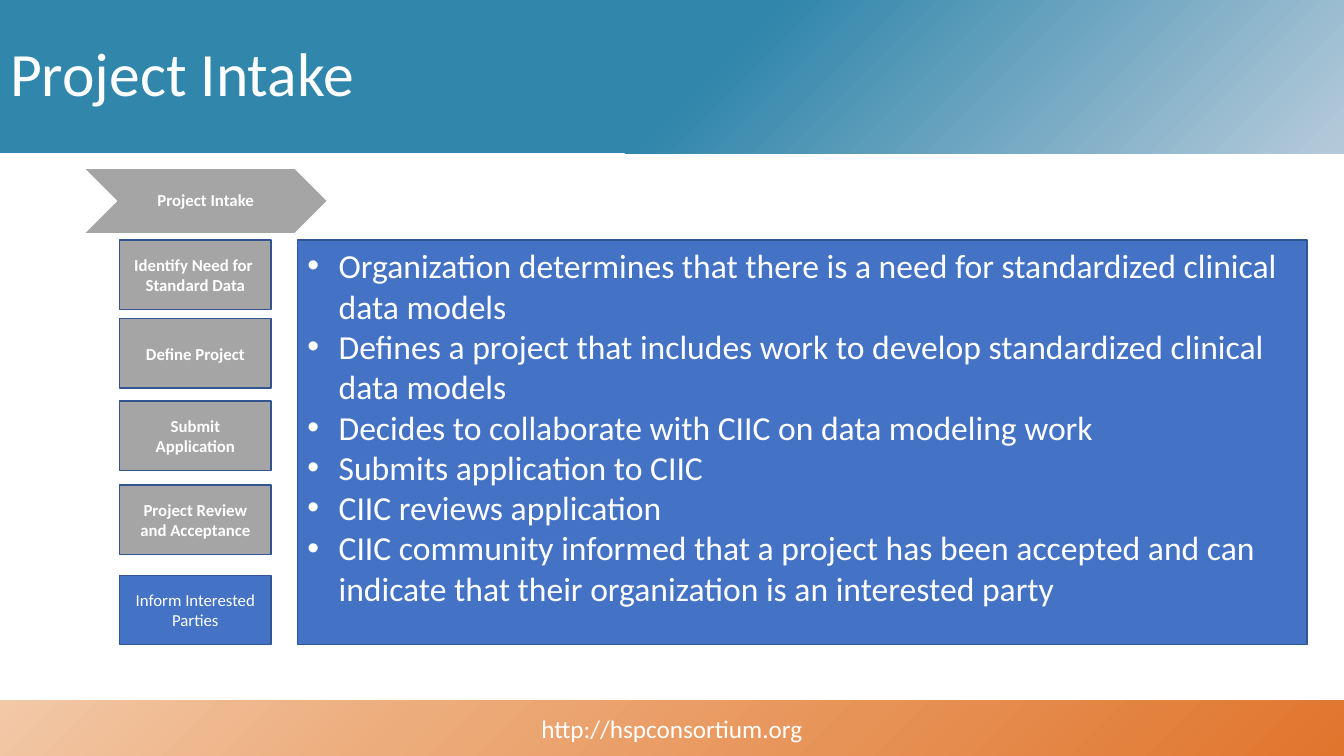
from dataclasses import dataclass

from lxml import etree
from pptx import Presentation
from pptx import util as u
from pptx.dml.color import RGBColor
from pptx.enum import shapes, text
from pptx.oxml import ns


@dataclass(frozen=True)
class Theme:
    font: str = "Calibri"
    white: str = "FFFFFF"
    blue: str = "4472C4"
    grey: str = "A5A5A5"
    edge: str = "325491"
    header: tuple = ((1, "B3C9D9"), (48, "3086AB"), (97, "3086AB"))
    footer: tuple = ((0, "E0752D"), (69, "EDAC7B"), (100, "F2C8A7"))
    title_size: int = 44
    list_size: int = 24
    footer_size: int = 18
    step_size: int = 12


def apply(target, values):
    for key, value in values.items():
        setattr(target, key, value)


class SlideBuilder:
    def __init__(self, deck, theme):
        self.theme = theme
        self.slide = deck.slides.add_slide(deck.slide_layouts[1])

    def place(self, item, box):
        apply(item, dict(zip(("left", "top", "width", "height"), map(u.Cm, box))))

    def paint(self, item, fill, edge):
        item.fill.solid()
        item.fill.fore_color.rgb = RGBColor.from_string(fill)
        item.line.color.rgb = RGBColor.from_string(edge)
        item.line.width = u.Pt(1)

    def set_text(self, item, lines, size, bold=False, align=text.PP_ALIGN.CENTER,
                 anchor=text.MSO_ANCHOR.MIDDLE, spacing=1.0, bulleted=False):
        frame = item.text_frame
        frame.text = "\n".join(lines)
        apply(frame, {"word_wrap": True, "auto_size": text.MSO_AUTO_SIZE.NONE,
                      "vertical_anchor": anchor})
        for paragraph in frame.paragraphs:
            if bulleted:
                self.bullet(paragraph)
            apply(paragraph, {"alignment": align, "line_spacing": spacing,
                              "space_before": u.Pt(0)})
            for run in paragraph.runs:
                apply(run.font, {"name": self.theme.font, "size": u.Pt(size), "bold": bold})
                run.font.color.rgb = RGBColor.from_string(self.theme.white)

    def bullet(self, paragraph):
        properties = paragraph._p.get_or_add_pPr()
        indent = u.Cm(0.79)
        properties.set("marL", str(indent))
        properties.set("indent", str(-indent))
        etree.SubElement(properties, ns.qn("a:buFont")).set("typeface", "Arial")
        etree.SubElement(properties, ns.qn("a:buChar")).set("char", "•")

    def shape(self, kind, box):
        item = self.slide.shapes.add_shape(kind, *map(u.Cm, box))
        item.shadow.inherit = False
        return item

    def band(self, box, stops):
        item = self.shape(shapes.MSO_SHAPE.RECTANGLE, box)
        item.line.fill.background()
        item.fill.gradient()
        gradient = item._element.spPr.find(ns.qn("a:gradFill"))
        for child in list(gradient):
            gradient.remove(child)
        stop_list = etree.SubElement(gradient, ns.qn("a:gsLst"))
        for percent, color in stops:
            stop = etree.SubElement(stop_list, ns.qn("a:gs"), pos=str(percent * 1000))
            etree.SubElement(stop, ns.qn("a:srgbClr"), val=color)
        circle = etree.SubElement(gradient, ns.qn("a:path"), {"path": "circle"})
        etree.SubElement(circle, ns.qn("a:fillToRect"), l="100000", t="100000")
        self.slide.shapes._spTree.insert(2, item._element)
        return item

    def title(self, wording, box):
        heading = self.slide.shapes.title
        self.place(heading, box)
        self.set_text(heading, [wording], self.theme.title_size,
                      align=text.PP_ALIGN.LEFT, spacing=0.9)

    def bullet_panel(self, points, box):
        panel = self.slide.placeholders[1]
        self.place(panel, box)
        self.paint(panel, self.theme.blue, self.theme.edge)
        self.set_text(panel, points, self.theme.list_size, align=text.PP_ALIGN.LEFT,
                      anchor=text.MSO_ANCHOR.TOP, bulleted=True)

    def step(self, lines, box, current=False):
        item = self.shape(shapes.MSO_SHAPE.RECTANGLE, box)
        self.paint(item, self.theme.blue if current else self.theme.grey, self.theme.edge)
        self.set_text(item, lines, self.theme.step_size, bold=not current)

    def phase(self, wording, box):
        item = self.shape(shapes.MSO_SHAPE.CHEVRON, box)
        self.paint(item, self.theme.grey, self.theme.white)
        self.set_text(item, [wording], self.theme.step_size, bold=True, spacing=0.9)


STEPS = [
    (6.05, ["Identify Need for ", "Standard Data"]),
    (8.03, ["Define Project"]),
    (10.11, ["Submit Application"]),
    (12.22, ["Project Review and Acceptance"]),
    (14.5, ["Inform Interested Parties"]),
]
POINTS = [
    "Organization determines that there is a need for standardized clinical data models",
    "Defines a project that includes work to develop standardized clinical data models",
    "Decides to collaborate with CIIC on data modeling work",
    "Submits application to CIIC",
    "CIIC reviews application",
    "CIIC community informed that a project has been accepted and can indicate that "
    "their organization is an interested party",
]


def main():
    deck = Presentation()
    width, height = 33.87, 19.05
    deck.slide_width, deck.slide_height = u.Cm(width), u.Cm(height)
    theme = Theme()
    intake = SlideBuilder(deck, theme)

    footer_height = 1.4
    footer = intake.band((0, height - footer_height, width, footer_height), theme.footer)
    intake.set_text(footer, ["http://hspconsortium.org"], theme.footer_size)
    intake.band((0, 0, width, 3.86), theme.header)
    intake.title("Project Intake", (0, 0.1, width, 3.68))

    for top, lines in STEPS:
        intake.step(lines, (3.02, top, 3.81, 1.75), current=top == STEPS[-1][0])
    intake.phase("Project Intake", (2.11, 4.24, 6.15, 1.65))
    intake.bullet_panel(POINTS, (7.49, STEPS[0][0], 25.45, 10.19))

    deck.save("out.pptx")


if __name__ == "__main__":
    main()
